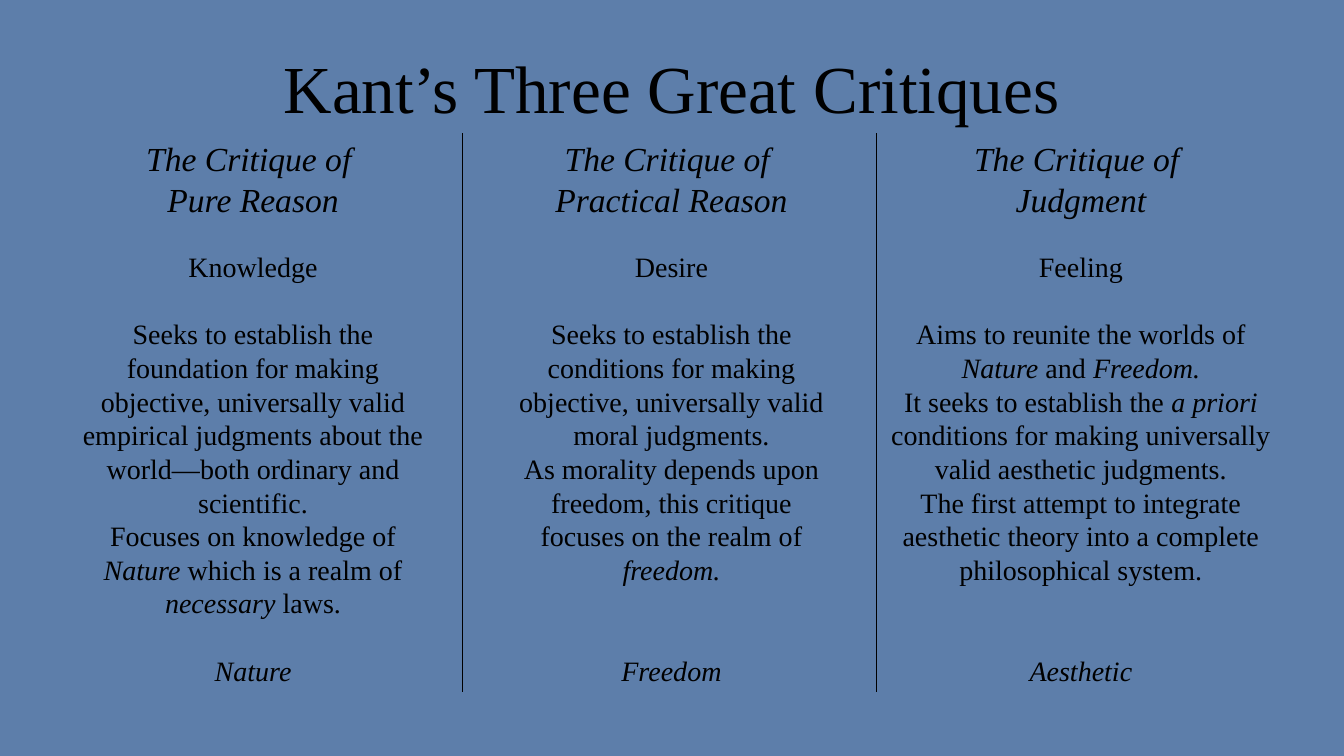
"""Build a slide that compares Kant's three Critiques in three columns."""
from dataclasses import dataclass

import pptx
import pptx.dml.color
import pptx.enum.shapes
import pptx.enum.text
import pptx.oxml
import pptx.oxml.ns
import pptx.slide
import pptx.text.text
import pptx.util

EMU_PER_PX = 9525
TITLE_ONLY = 5
COLUMN_TOP = 127
DIVIDER_BOTTOM = 659


@dataclass(frozen=True)
class Theme:
    font: str = "Times New Roman"
    background: str = "5D7EAA"
    ink: str = "000000"
    title_size: int = 48
    heading_size: int = 24
    body_size: int = 20
    heading_gap: int = 22
    body_gap: int = 24
    divider_width: float = 0.5


@dataclass(frozen=True)
class Span:
    text: str
    italic: bool = False


@dataclass(frozen=True)
class Column:
    left: int
    width: int
    height: int
    book: str
    faculty: str
    aims: list[list[Span]]
    realm: str
    realm_gap_lines: int


THEME = Theme()

COLUMNS = [
    Column(63, 356, 537, "Pure Reason", "Knowledge", [
        [Span("Seeks to establish the foundation for making objective, universally valid "
              "empirical judgments about the world—both ordinary and scientific.")],
        [Span("Focuses on knowledge of "), Span("Nature", True),
         Span(" which is a realm of "), Span("necessary", True), Span(" laws.")],
    ], "Nature", 1),
    Column(484, 311, 565, "Practical Reason", "Desire", [
        [Span("Seeks to establish the conditions for making objective, "
              "universally valid moral judgments.")],
        [Span("As morality depends upon freedom, this critique focuses on the realm of "),
         Span("freedom.", True)],
    ], "Freedom", 2),
    Column(835, 389, 537, "Judgment", "Feeling", [
        [Span("Aims to reunite the worlds of "), Span("Nature", True),
         Span(" and "), Span("Freedom.", True)],
        [Span("It seeks to establish the "), Span("a priori ", True),
         Span("conditions for making universally valid aesthetic judgments.")],
        [Span("The first attempt to integrate aesthetic theory into a complete "
              "philosophical system.")],
    ], "Aesthetic", 2),
]

DIVIDERS = [440, 835]


def px(length: int) -> pptx.util.Emu:
    """Turn pixels into EMU."""
    return pptx.util.Emu(length * EMU_PER_PX)


def colour(code: str) -> pptx.dml.color.RGBColor:
    """Turn a hex code into a colour."""
    return pptx.dml.color.RGBColor.from_string(code)


def write_para(para: pptx.text.text._Paragraph, spans: list[Span], size: int, gap: int = 0) -> None:
    """Fill a centred paragraph run by run, with a gap above it."""
    para.alignment = pptx.enum.text.PP_ALIGN.CENTER
    para.space_before = pptx.util.Pt(gap)
    for span in spans:
        run = para.add_run()
        run.text = span.text
        run.font.name = THEME.font
        run.font.size = pptx.util.Pt(size)
        run.font.italic = span.italic
        run.font.color.rgb = colour(THEME.ink)


def draw_title(slide: pptx.slide.Slide, text: str) -> None:
    """Place and write the slide title."""
    title = slide.shapes.title
    title.left, title.top, title.width, title.height = px(0), px(33), px(1280), px(94)
    frame = title.text_frame
    frame.auto_size = pptx.enum.text.MSO_AUTO_SIZE.NONE
    frame.vertical_anchor = pptx.enum.text.MSO_ANCHOR.BOTTOM
    para = frame.paragraphs[0]
    para.line_spacing = 0.9
    write_para(para, [Span(text)], THEME.title_size)


def draw_column(slide: pptx.slide.Slide, column: Column) -> None:
    """Draw the text box for one Critique."""
    box = slide.shapes.add_textbox(
        px(column.left), px(COLUMN_TOP), px(column.width), px(column.height))
    frame = box.text_frame
    frame.word_wrap = True
    frame.auto_size = pptx.enum.text.MSO_AUTO_SIZE.SHAPE_TO_FIT_TEXT
    first_aim, *other_aims = column.aims
    write_para(frame.paragraphs[0], [Span("The Critique of ", True)], THEME.heading_size)
    write_para(frame.add_paragraph(), [Span(column.book, True)], THEME.heading_size)
    write_para(frame.add_paragraph(), [Span(column.faculty)], THEME.body_size, THEME.heading_gap)
    write_para(frame.add_paragraph(), first_aim, THEME.body_size, THEME.body_gap)
    for aim in other_aims:
        write_para(frame.add_paragraph(), aim, THEME.body_size)
    write_para(frame.add_paragraph(), [Span(column.realm, True)], THEME.body_size,
               column.realm_gap_lines * THEME.body_gap)


def draw_divider(slide: pptx.slide.Slide, x: int) -> None:
    """Draw a thin vertical line between two columns."""
    divider = slide.shapes.add_connector(
        pptx.enum.shapes.MSO_CONNECTOR.STRAIGHT,
        px(x), px(COLUMN_TOP), px(x), px(DIVIDER_BOTTOM))
    divider.line.color.rgb = colour(THEME.ink)
    divider.line.width = pptx.util.Pt(THEME.divider_width)
    properties = divider._element.spPr
    properties.append(pptx.oxml.parse_xml(
        f"<a:effectLst {pptx.oxml.ns.nsdecls('a')}/>"))


def main() -> None:
    """Build and save the deck."""
    deck = pptx.Presentation()
    deck.slide_width, deck.slide_height = px(1280), px(720)
    slide = deck.slides.add_slide(deck.slide_layouts[TITLE_ONLY])
    fill = slide.background.fill
    fill.solid()
    fill.fore_color.rgb = colour(THEME.background)
    draw_title(slide, "Kant’s Three Great Critiques")
    for column in COLUMNS:
        draw_column(slide, column)
    for x in DIVIDERS:
        draw_divider(slide, x)
    deck.save("out.pptx")


if __name__ == "__main__":
    main()
